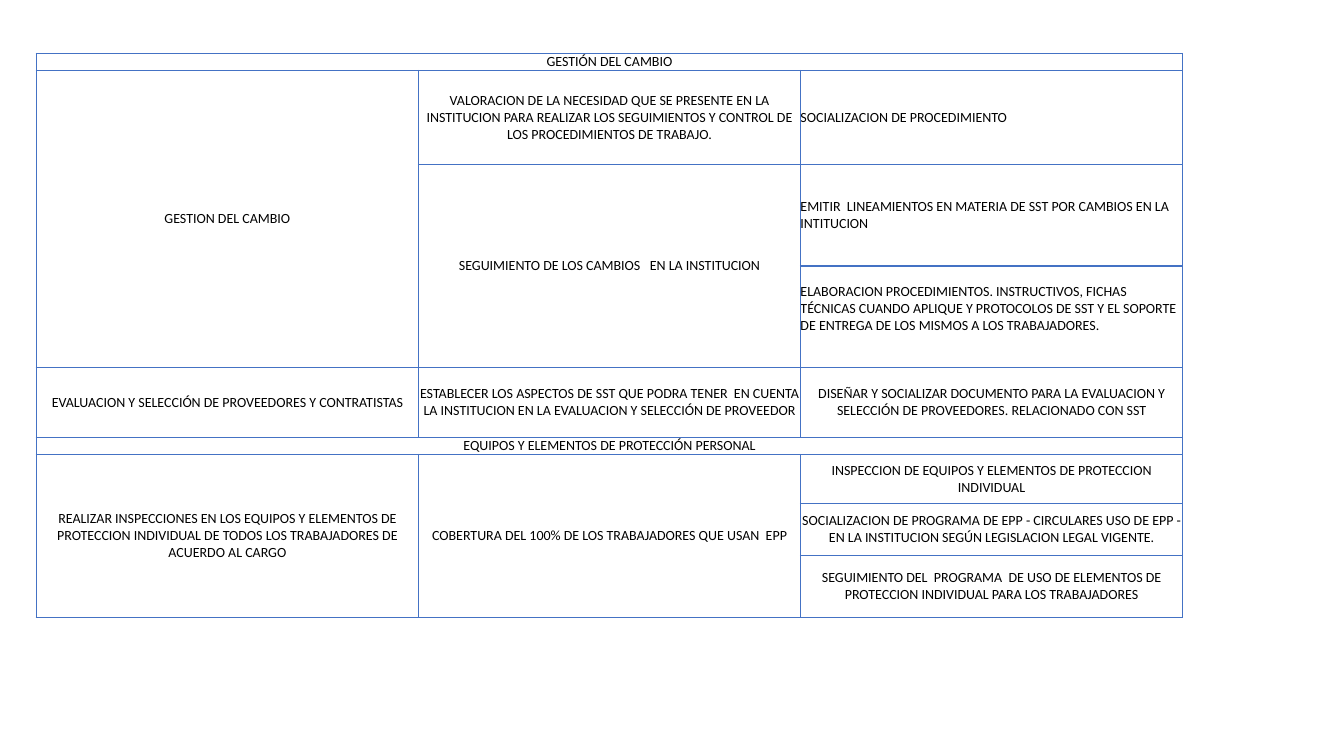
from dataclasses import dataclass

from pptx import Presentation
from pptx.dml.color import RGBColor
from pptx.enum.text import MSO_ANCHOR, PP_ALIGN
from pptx.oxml import parse_xml
from pptx.oxml.ns import nsdecls
from pptx.table import Table, _Cell
from pptx.util import Inches, Pt


@dataclass(frozen=True)
class Theme:
    font: str = "Calibri"
    size: int = 10
    text: str = "000000"
    border: str = "4472C4"
    border_width: int = 1


@dataclass(frozen=True)
class Entry:
    row: int
    column: int
    text: str
    rows: int = 1
    columns: int = 1
    align: PP_ALIGN = PP_ALIGN.CENTER
    bottom: float = 0


THEME = Theme()
COLUMN_WIDTH = 3.79
ROW_HEIGHTS = (0.17, 0.93, 1.01, 1.01, 0.69, 0.17, 0.49, 0.51, 0.62)
LEFT = PP_ALIGN.LEFT

ENTRIES = (
    # Change management
    Entry(0, 0, "GESTIÓN DEL CAMBIO", columns=3),
    Entry(1, 0, "GESTION DEL CAMBIO", rows=3),
    Entry(1, 1, "VALORACION DE LA NECESIDAD QUE SE PRESENTE EN LA INSTITUCION PARA REALIZAR "
                "LOS SEGUIMIENTOS Y CONTROL DE LOS PROCEDIMIENTOS DE TRABAJO."),
    Entry(1, 2, "SOCIALIZACION DE PROCEDIMIENTO", align=LEFT),
    Entry(2, 1, "SEGUIMIENTO DE LOS CAMBIOS   EN LA INSTITUCION", rows=2),
    Entry(2, 2, "EMITIR  LINEAMIENTOS EN MATERIA DE SST POR CAMBIOS EN LA INTITUCION",
          align=LEFT),
    Entry(3, 2, "ELABORACION PROCEDIMIENTOS. INSTRUCTIVOS, FICHAS TÉCNICAS CUANDO APLIQUE Y "
                "PROTOCOLOS DE SST Y EL SOPORTE DE ENTREGA DE LOS MISMOS A LOS TRABAJADORES.",
          align=LEFT, bottom=0.17),
    # Suppliers
    Entry(4, 0, "EVALUACION Y SELECCIÓN DE PROVEEDORES Y CONTRATISTAS"),
    Entry(4, 1, "ESTABLECER LOS ASPECTOS DE SST QUE PODRA TENER  EN CUENTA LA INSTITUCION "
                "EN LA EVALUACION Y SELECCIÓN DE PROVEEDOR"),
    Entry(4, 2, "DISEÑAR Y SOCIALIZAR DOCUMENTO PARA LA EVALUACION Y SELECCIÓN DE "
                "PROVEEDORES. RELACIONADO CON SST"),
    # Protective equipment
    Entry(5, 0, "EQUIPOS Y ELEMENTOS DE PROTECCIÓN PERSONAL", columns=3),
    Entry(6, 0, "REALIZAR INSPECCIONES EN LOS EQUIPOS Y ELEMENTOS DE PROTECCION INDIVIDUAL "
                "DE TODOS LOS TRABAJADORES DE ACUERDO AL CARGO", rows=3),
    Entry(6, 1, "COBERTURA DEL 100% DE LOS TRABAJADORES QUE USAN  EPP", rows=3),
    Entry(6, 2, "INSPECCION DE EQUIPOS Y ELEMENTOS DE PROTECCION INDIVIDUAL"),
    Entry(7, 2, "SOCIALIZACION DE PROGRAMA DE EPP - CIRCULARES USO DE EPP - EN LA "
                "INSTITUCION SEGÚN LEGISLACION LEGAL VIGENTE."),
    Entry(8, 2, "SEGUIMIENTO DEL  PROGRAMA  DE USO DE ELEMENTOS DE PROTECCION INDIVIDUAL "
                "PARA LOS TRABAJADORES"),
)


def apply(target: object, values: dict) -> None:
    for name, value in values.items():
        setattr(target, name, value)


def format_cell(cell: _Cell) -> None:
    apply(cell, {
        "margin_left": 0, "margin_right": 0, "margin_top": 0, "margin_bottom": 0,
        "vertical_anchor": MSO_ANCHOR.MIDDLE,
    })
    # Borders come before the fill in the cell properties
    properties = cell._tc.get_or_add_tcPr()
    for side in ("lnL", "lnR", "lnT", "lnB"):
        properties.append(parse_xml(
            f'<a:{side} {nsdecls("a")} w="{Pt(THEME.border_width)}">'
            f'<a:solidFill><a:srgbClr val="{THEME.border}"/></a:solidFill></a:{side}>'))
    cell.fill.background()


def write_entry(table: Table, entry: Entry) -> None:
    cell = table.cell(entry.row, entry.column)
    if entry.rows > 1 or entry.columns > 1:
        cell.merge(table.cell(entry.row + entry.rows - 1, entry.column + entry.columns - 1))
    cell.margin_bottom = Inches(entry.bottom)
    para = cell.text_frame.paragraphs[0]
    para.alignment = entry.align
    span = para.add_run()
    span.text = entry.text
    apply(span.font, {"name": THEME.font, "size": Pt(THEME.size), "bold": False})
    span.font.color.rgb = RGBColor.from_string(THEME.text)


def main() -> None:
    deck = Presentation()
    apply(deck, {"slide_width": Inches(13.33), "slide_height": Inches(7.5)})
    page = deck.slides.add_slide(deck.slide_layouts[6])

    # Table grid
    table = page.shapes.add_table(
        len(ROW_HEIGHTS), 3, Inches(0.36), Inches(0.53),
        Inches(3 * COLUMN_WIDTH), Inches(sum(ROW_HEIGHTS))).table
    apply(table, {"first_row": False, "horz_banding": False})
    for column in table.columns:
        column.width = Inches(COLUMN_WIDTH)
    for row, height in zip(table.rows, ROW_HEIGHTS):
        row.height = Inches(height)

    # Cell formats and wording
    for cell in table.iter_cells():
        format_cell(cell)
    for entry in ENTRIES:
        write_entry(table, entry)

    deck.save("out.pptx")


if __name__ == "__main__":
    main()
